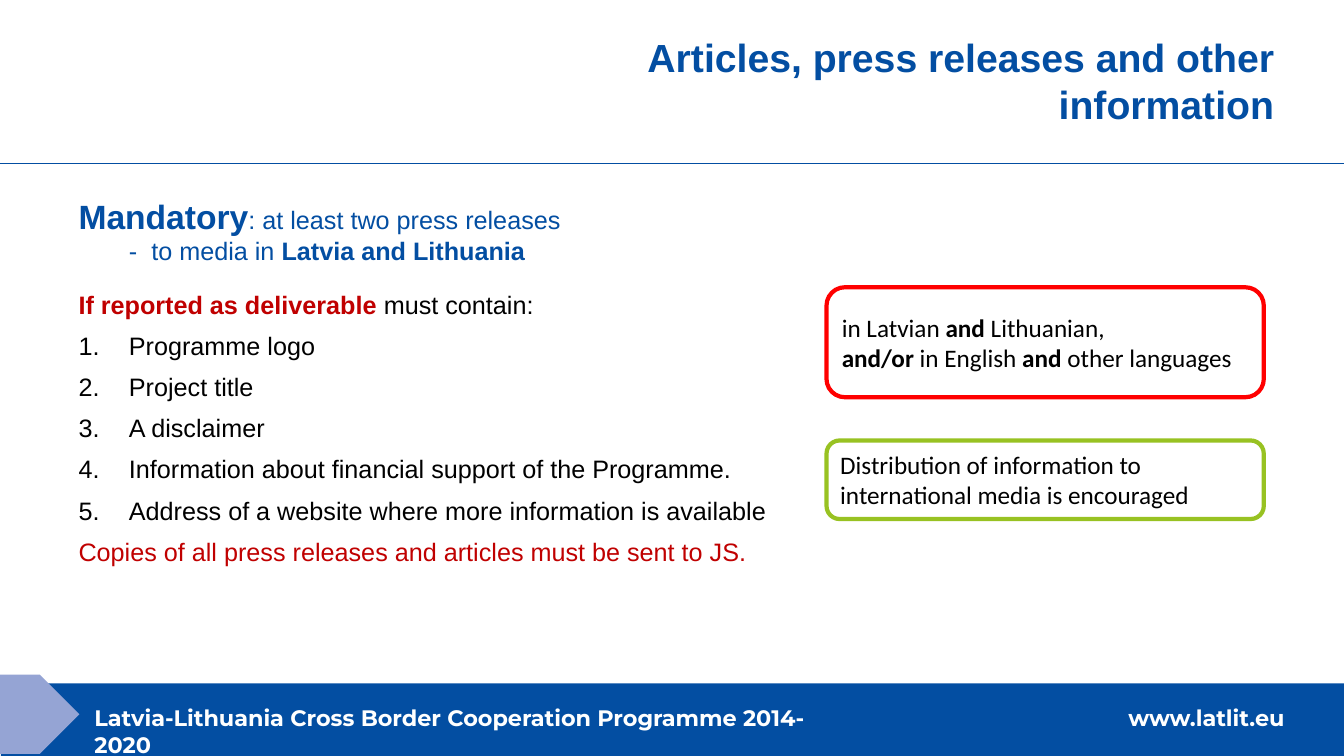
from lxml import etree
from pptx import Presentation
from pptx.dml.color import RGBColor
from pptx.enum.shapes import MSO_CONNECTOR, MSO_SHAPE
from pptx.enum.text import MSO_ANCHOR, MSO_AUTO_SIZE, PP_ALIGN
from pptx.oxml.ns import qn
from pptx.util import Cm, Pt

STRAIGHT = MSO_CONNECTOR.STRAIGHT
RECT, ROUNDED = MSO_SHAPE.RECTANGLE, MSO_SHAPE.ROUNDED_RECTANGLE
TOP, MIDDLE = MSO_ANCHOR.TOP, MSO_ANCHOR.MIDDLE
NO_FIT = MSO_AUTO_SIZE.NONE
LEFT, RIGHT = PP_ALIGN.LEFT, PP_ALIGN.RIGHT
BLUE, LILAC, WHITE, BLACK = "034EA2", "95A4D4", "FFFFFF", "000000"
DARK_RED, RED, GREEN = "C00000", "FF0000", "98C222"
BOLD = {"bold": True}


def rgb(value):
    return RGBColor.from_string(value)


def write(tf, paragraphs, size, name, color, align=LEFT, anchor=TOP, wrap=True):
    for attr, value in {"auto_size": NO_FIT, "word_wrap": wrap,
                        "vertical_anchor": anchor}.items():
        setattr(tf, attr, value)
    for i, runs in enumerate(paragraphs):
        p = tf.paragraphs[0] if i == 0 else tf.add_paragraph()
        p.alignment = align
        for text, changes in runs:
            r = p.add_run()
            r.text = text
            look = {"size": Pt(size), "name": name, "bold": False, "color": color} | changes
            r.font.color.rgb = rgb(look.pop("color"))
            for attr, value in look.items():
                setattr(r.font, attr, value)


prs = Presentation()
prs.slide_width, prs.slide_height = Cm(33.87), Cm(19.05)
s = prs.slides.add_slide(prs.slide_layouts[5])

line = s.shapes.add_connector(STRAIGHT, 0, Cm(4.11), prs.slide_width, Cm(4.11))
line.line.color.rgb = rgb(BLUE)
line.line.width = Pt(0.5)
etree.SubElement(line._element.spPr, qn("a:effectLst"))

band = s.shapes.add_shape(RECT, Cm(0.02), Cm(17.22), Cm(33.85), Cm(1.83))
builder = s.shapes.build_freeform(0, 17.22, scale=Cm(1))
builder.add_line_segments([(1.17, 17.22), (1.88, 18.14), (1.17, 19.05), (0.02, 19.05)])
arrow = builder.convert_to_shape()
for sp, color in [(band, BLUE), (arrow, LILAC)]:
    sp.shadow.inherit = False
    sp.fill.solid()
    sp.fill.fore_color.rgb = rgb(color)
    sp.line.fill.background()

for text, left, width, wrap in [
    ("Latvia-Lithuania Cross Border Cooperation Programme 2014-2020", 2.13, 19.63, True),
    ("www.latlit.eu", 28.19, 4.47, False),
]:
    sp = s.shapes.add_textbox(Cm(left), Cm(17.63), Cm(width), Cm(0.94))
    write(sp.text_frame, [[(text, BOLD)]], 16, "Montserrat", WHITE, wrap=wrap)

title = s.shapes.title
for attr, value in {"left": 11.86, "top": 0.71, "width": 20.5, "height": 2.9}.items():
    setattr(title, attr, Cm(value))
write(title.text_frame, [[("Articles, press releases and other information", BOLD)]],
      28, "Arial", BLUE, align=RIGHT)

mandatory = s.shapes.add_textbox(Cm(1.73), Cm(4.8), Cm(26.97), Cm(2.06))
write(mandatory.text_frame, [
    [("Mandatory", {"size": Pt(24), "bold": True}), (": at least two press releases", {})],
    [("-  to media in ", {}), ("Latvia and Lithuania", BOLD)],
], 18, "Arial", BLUE)
pPr = mandatory.text_frame.paragraphs[1]._p.get_or_add_pPr()
pPr.set("marL", str(Cm(1.27)))

items = ["Programme logo", "Project title", "A disclaimer",
         "Information about financial support of the Programme.",
         "Address of a website where more information is available"]
body = s.shapes.add_textbox(Cm(1.73), Cm(7.24), Cm(17.86), Cm(10.03))
write(body.text_frame, [
    [("If reported as deliverable", {"bold": True, "color": DARK_RED}), (" must contain:", {})],
    *[[(item, {})] for item in items],
    [("Copies of all press releases and articles must be sent to JS.", {"color": DARK_RED})],
], 18, "Arial", BLACK)
for i, p in enumerate(body.text_frame.paragraphs):
    p.line_spacing = 0.9
    p.space_before = Pt(10 if i else 0)
    if 1 <= i <= len(items):
        pPr = p._p.get_or_add_pPr()
        pPr.set("marL", str(Cm(1.27)))
        pPr.set("indent", str(-Cm(1.27)))
        etree.SubElement(pPr, qn("a:buAutoNum"), type="arabicPeriod")

for top, height, color, paragraphs in [
    (11.1, 1.98, GREEN,
     [[("Distribution of information to international media is encouraged", {})]]),
    (7.24, 2.77, RED,
     [[("in Latvian ", {}), ("and", BOLD), (" Lithuanian,", {})],
      [("and/or", BOLD), (" in English ", {}), ("and ", BOLD), ("other languages", {})]]),
]:
    sp = s.shapes.add_shape(ROUNDED, Cm(20.83), Cm(top), Cm(11.02), Cm(height))
    sp.shadow.inherit = False
    sp.fill.background()
    sp.line.color.rgb = rgb(color)
    sp.line.width = Pt(3)
    write(sp.text_frame, paragraphs, 18, "Calibri", BLACK, anchor=MIDDLE)

prs.save("out.pptx")
